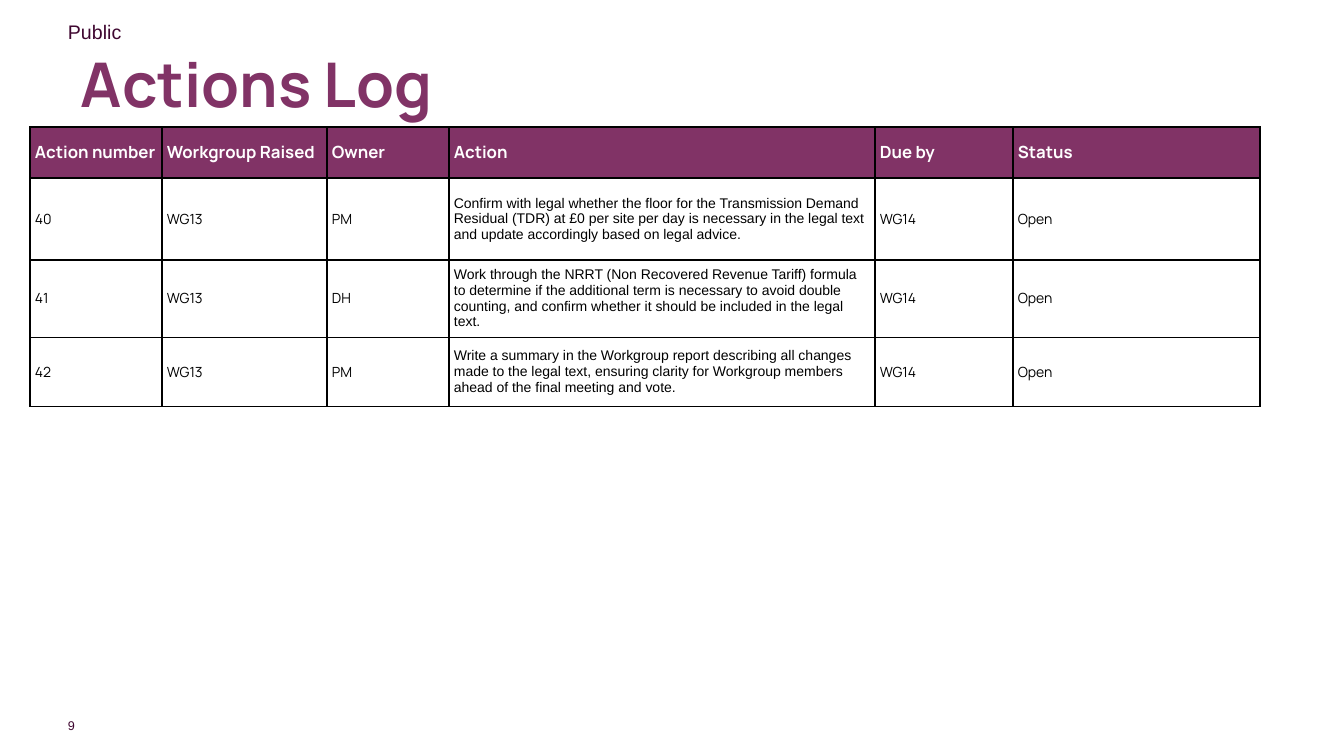
from lxml import etree
from pptx import Presentation
from pptx.dml.color import RGBColor
from pptx.enum.text import MSO_ANCHOR, PP_ALIGN
from pptx.oxml.ns import qn
from pptx.util import Pt

# Content
CLASSIFICATION = "Public"
TITLE = "Actions Log"
PAGE_NUMBER = "9"
HEADINGS = ("Action number", "Workgroup Raised", "Owner", "Action", "Due by", "Status")
ACTIONS = [
    ("40", "WG13", "PM",
     "Confirm with legal whether the floor for the Transmission Demand Residual (TDR) "
     "at £0 per site per day is necessary in the legal text and update accordingly "
     "based on legal advice.", "WG14", "Open"),
    ("41", "WG13", "DH",
     "Work through the NRRT (Non Recovered Revenue Tariff) formula to determine if the "
     "additional term is necessary to avoid double counting, and confirm whether it "
     "should be included in the legal text.", "WG14", "Open"),
    ("42", "WG13", "PM",
     "Write a summary in the Workgroup report describing all changes made to the legal "
     "text, ensuring clarity for Workgroup members ahead of the final meeting and vote.",
     "WG14", "Open"),
]

# Layout in px
EMU_PER_PX = 9071.43
SLIDE_SIZE = (1344, 756)
CLASSIFICATION_BOX = (58, 15, 504, 34)
TITLE_BOX = (71, 40, 1070, 96)
PAGE_NUMBER_BOX = (60, 718, 15, 15)
LOG_LEFT, LOG_TOP = 30, 127
COLUMN_WIDTHS = (132, 165, 122, 426, 138, 247)
ROW_HEIGHTS = (51, 82, 72, 69)
CELL_INSET = 5

# Style
PLUM = RGBColor(0x81, 0x33, 0x66)
DARK_PLUM = RGBColor(0x3F, 0x07, 0x30)
WHITE = RGBColor(0xFF, 0xFF, 0xFF)
BLACK = RGBColor(0, 0, 0)
HEADING_FONT, BODY_FONT = "Manrope", "Arial"
MIDDLE, TOP = MSO_ANCHOR.MIDDLE, MSO_ANCHOR.TOP
LEFT, RIGHT = PP_ALIGN.LEFT, PP_ALIGN.RIGHT


def px(length):
    return round(length * EMU_PER_PX)


def write(paragraph, text, font, size, color, bold=False):
    run = paragraph.add_run()
    run.text = text
    run.font.name = font
    run.font.size = Pt(size)
    run.font.bold = bold
    run.font.color.rgb = color


def add_label(box, text, font, size, color, bold=False, anchor=TOP, align=LEFT):
    label = slide.shapes.add_textbox(*map(px, box))
    frame = label.text_frame
    frame.word_wrap = True
    frame.vertical_anchor = anchor
    paragraph = frame.paragraphs[0]
    paragraph.alignment = align
    write(paragraph, text, font, size, color, bold)
    return frame


def add_borders(cell):
    properties = cell._tc.get_or_add_tcPr()
    for position, side in enumerate(("a:lnL", "a:lnR", "a:lnT", "a:lnB")):
        line = etree.Element(qn(side), w=str(Pt(1)))
        fill = etree.SubElement(line, qn("a:solidFill"))
        etree.SubElement(fill, qn("a:srgbClr"), val=str(BLACK))
        properties.insert(position, line)


presentation = Presentation()
presentation.slide_width, presentation.slide_height = map(px, SLIDE_SIZE)
slide = presentation.slides.add_slide(presentation.slide_layouts[6])

# Page number, classification and title
page_number = add_label(PAGE_NUMBER_BOX, PAGE_NUMBER, BODY_FONT, 9, DARK_PLUM,
                        anchor=MIDDLE, align=RIGHT)
page_number.word_wrap = False
page_number.margin_left = page_number.margin_right = 0
page_number.margin_top = page_number.margin_bottom = 0
add_label(CLASSIFICATION_BOX, CLASSIFICATION, BODY_FONT, 14, DARK_PLUM)
title = add_label(TITLE_BOX, TITLE, HEADING_FONT, 44, PLUM, bold=True, anchor=MIDDLE)
title.paragraphs[0].line_spacing = 0.9

# Actions table
log = slide.shapes.add_table(
    len(ROW_HEIGHTS), len(COLUMN_WIDTHS), px(LOG_LEFT), px(LOG_TOP),
    px(sum(COLUMN_WIDTHS)), px(sum(ROW_HEIGHTS))).table
log.horz_banding = False
for column, width in zip(log.columns, COLUMN_WIDTHS):
    column.width = px(width)
for row, height in zip(log.rows, ROW_HEIGHTS):
    row.height = px(height)

for r, entries in enumerate([HEADINGS, *ACTIONS]):
    is_heading = r == 0
    for c, entry in enumerate(entries):
        cell = log.cell(r, c)
        cell.vertical_anchor = MIDDLE
        cell.margin_left = cell.margin_right = px(CELL_INSET)
        cell.margin_top = cell.margin_bottom = px(CELL_INSET)
        paragraph = cell.text_frame.paragraphs[0]
        if is_heading:
            cell.fill.solid()
            cell.fill.fore_color.rgb = PLUM
            write(paragraph, entry, HEADING_FONT, 12, WHITE, bold=True)
        else:
            cell.fill.background()
            is_action = HEADINGS[c] == "Action"
            write(paragraph, entry, BODY_FONT if is_action else HEADING_FONT, 10, BLACK)
        add_borders(cell)

presentation.save("out.pptx")
